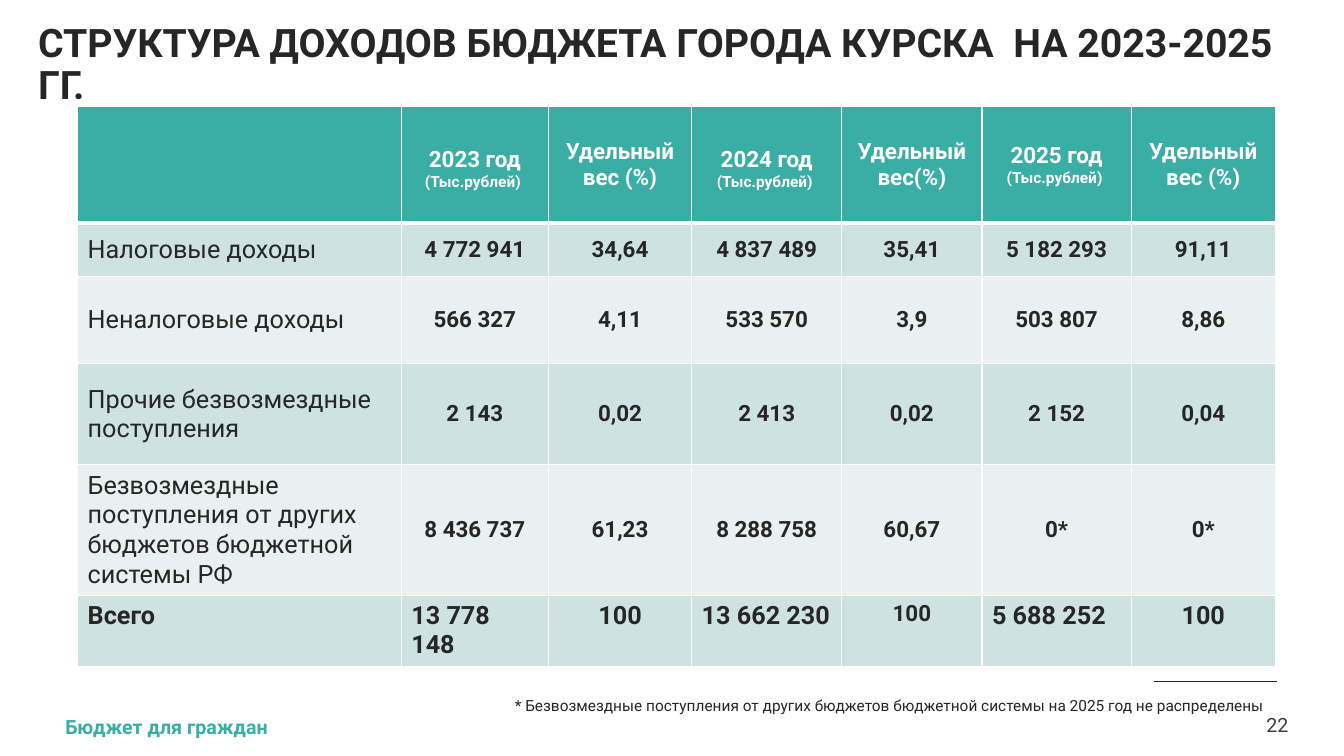
from lxml.etree import SubElement
from pptx import Presentation
from pptx.dml.color import RGBColor
from pptx.enum.shapes import MSO_CONNECTOR
from pptx.enum.text import MSO_ANCHOR, PP_ALIGN
from pptx.oxml.ns import qn
from pptx.util import Pt

PX = 9144
FONT = "Roboto"
TEAL = RGBColor(0x3A, 0xAD, 0xA5)
MINT = RGBColor(0xCE, 0xE3, 0xE1)
PALE = RGBColor(0xE8, 0xF1, 0xF0)
WHITE = RGBColor(0xFF, 0xFF, 0xFF)
DARK = RGBColor(0x26, 0x26, 0x26)
GRAY = RGBColor(0x3C, 0x3C, 0x3C)

COLUMN_WIDTHS = [321, 146, 142, 149, 139, 148, 143]
ROW_HEIGHTS = [115, 53, 87, 100, 128, 68]
HEADERS = ["", "2023 год ", "Удельный вес (%)", "2024 год ",
           "Удельный вес(%)", "2025 год ", "Удельный вес (%)"]
UNIT = "(Тыс.рублей) "
INCOME = [
    ["Налоговые доходы", "4 772 941", "34,64", "4 837 489", "35,41", "5 182 293", "91,11"],
    ["Неналоговые доходы", "566 327", "4,11", "533 570", "3,9", "503 807", "8,86"],
    ["Прочие безвозмездные поступления", "2 143", "0,02", "2 413", "0,02", "2 152", "0,04"],
    ["Безвозмездные поступления от других бюджетов бюджетной системы РФ",
     "8 436 737", "61,23", "8 288 758", "60,67", "0*", "0*"],
]
TOTAL = ["Всего", "13 778 148", "100", "13 662 230", "100", "5 688 252", "100"]


def write(para, text, size=16, color=DARK, bold=False, align=PP_ALIGN.LEFT):
    para.alignment = align
    span = para.add_run()
    span.text = text
    span.font.name = FONT
    span.font.size = Pt(size)
    span.font.bold = bold
    span.font.color.rgb = color


def add_text(page, bounds, text, anchor=MSO_ANCHOR.TOP, inset=True, spacing=None, **style):
    box = page.shapes.add_textbox(*(n * PX for n in bounds))
    frame = box.text_frame
    frame.word_wrap = True
    frame.vertical_anchor = anchor
    if not inset:
        frame.margin_left = frame.margin_right = frame.margin_top = frame.margin_bottom = 0
    para = frame.paragraphs[0]
    if spacing:
        para.line_spacing = spacing
    write(para, text, **style)


def style_cell(cell, fill, top=1, bottom=1):
    properties = cell._tc.get_or_add_tcPr()
    for side, width in (("L", 1), ("R", 1), ("T", top), ("B", bottom)):
        edge = SubElement(properties, qn(f"a:ln{side}"), w=str(Pt(width)))
        SubElement(SubElement(edge, qn("a:solidFill")), qn("a:srgbClr"), val=str(WHITE))
    cell.fill.solid()
    cell.fill.fore_color.rgb = fill


def fill_header(table):
    for column, text in enumerate(HEADERS):
        cell = table.cell(0, column)
        style_cell(cell, TEAL, bottom=3)
        cell.vertical_anchor = MSO_ANCHOR.MIDDLE
        if not text:
            continue
        para = cell.text_frame.paragraphs[0]
        style = dict(color=WHITE, bold=True, align=PP_ALIGN.CENTER)
        write(para, text, **style)
        if "год" in text:
            write(para, UNIT, size=11, **style)
        if column in (1, 3):
            cell.margin_top = 13 * PX


def fill_income(table):
    for row, values in enumerate(INCOME, 1):
        for column, text in enumerate(values):
            cell = table.cell(row, column)
            style_cell(cell, MINT if row % 2 else PALE, top=3 if row == 1 else 1)
            cell.vertical_anchor = MSO_ANCHOR.MIDDLE
            para = cell.text_frame.paragraphs[0]
            if column:
                write(para, text, bold=True, align=PP_ALIGN.CENTER)
            else:
                write(para, text, size=18)


def fill_total(table):
    for column, text in enumerate(TOTAL):
        cell = table.cell(len(INCOME) + 1, column)
        style_cell(cell, MINT)
        write(cell.text_frame.paragraphs[0], text, size=16 if column == 4 else 18, bold=True,
              align=PP_ALIGN.CENTER if text == "100" else PP_ALIGN.LEFT)


def add_income_table(page, left, top):
    table = page.shapes.add_table(
        len(ROW_HEIGHTS), len(COLUMN_WIDTHS), left * PX, top * PX,
        sum(COLUMN_WIDTHS) * PX, sum(ROW_HEIGHTS) * PX).table
    for column, width in zip(table.columns, COLUMN_WIDTHS):
        column.width = width * PX
    for row, height in zip(table.rows, ROW_HEIGHTS):
        row.height = height * PX
    fill_header(table)
    fill_income(table)
    fill_total(table)


def add_rule(page, start, end, y):
    rule = page.shapes.add_connector(
        MSO_CONNECTOR.STRAIGHT, start * PX, y * PX, end * PX, y * PX)
    rule.line.color.rgb = DARK
    rule.line.width = Pt(0.5)
    SubElement(rule._element.spPr, qn("a:effectLst"))


def main():
    deck = Presentation()
    deck.slide_width = 1333 * PX
    deck.slide_height = 750 * PX
    page = deck.slides.add_slide(deck.slide_layouts[6])
    add_text(page, (1243, 707, 35, 24), "22", anchor=MSO_ANCHOR.MIDDLE, inset=False,
             size=14, color=GRAY, align=PP_ALIGN.RIGHT)
    add_text(page, (65, 709, 400, 24), "Бюджет для граждан", inset=False,
             size=14, color=TEAL, bold=True)
    add_text(page, (28, 27, 1282, 76),
             "СТРУКТУРА ДОХОДОВ БЮДЖЕТА ГОРОДА КУРСКА  НА 2023-2025 ГГ.",
             anchor=MSO_ANCHOR.MIDDLE, spacing=0.9, size=28, bold=True)
    add_income_table(page, 77, 106)
    add_text(page, (351, 686, 913, 64),
             "* Безвозмездные поступления от других бюджетов бюджетной системы "
             "на 2025 год не распределены", size=11, align=PP_ALIGN.RIGHT)
    add_rule(page, 1145, 1267, 676)
    deck.save("out.pptx")


if __name__ == "__main__":
    main()
